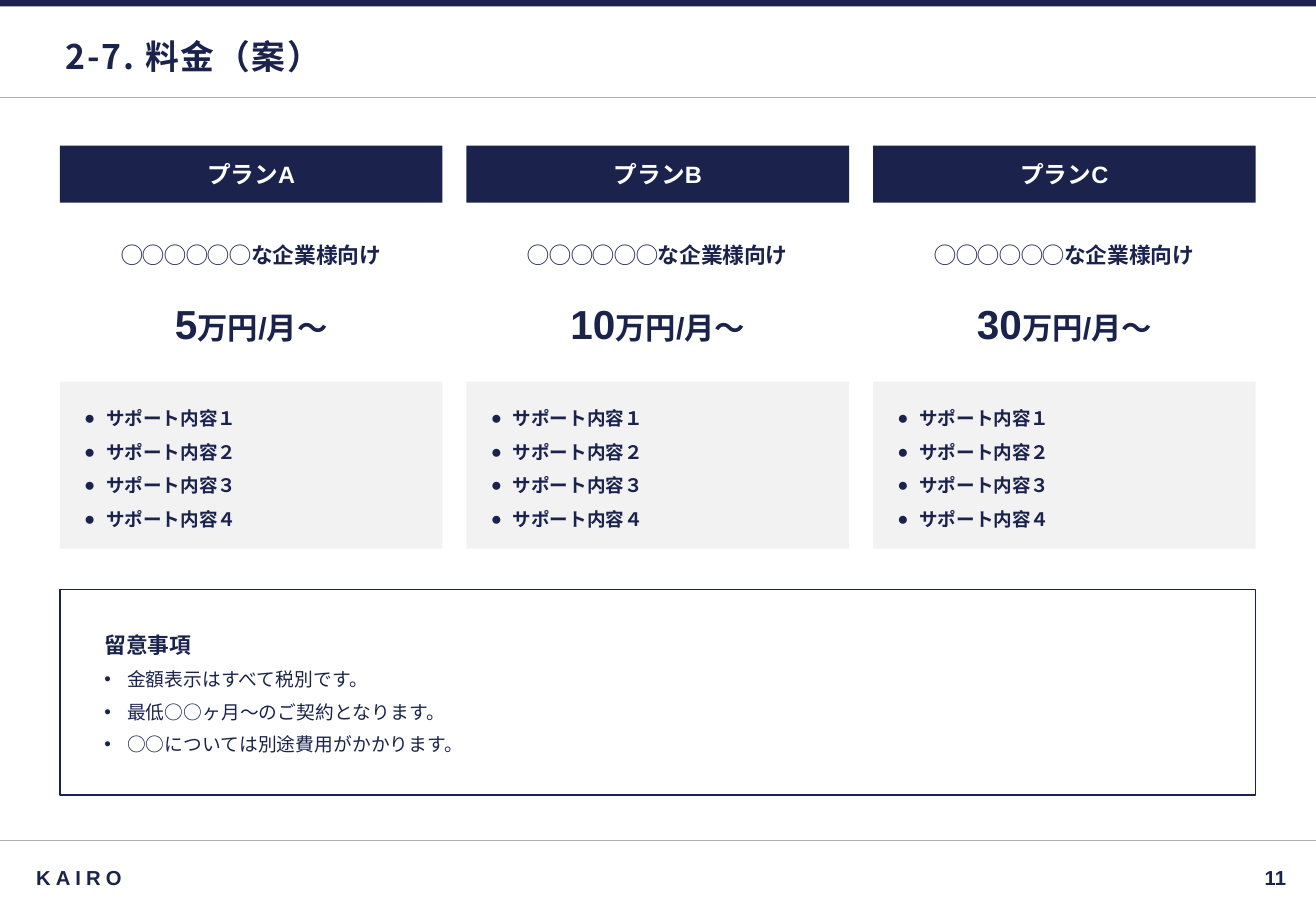
from lxml import etree
from pptx import Presentation
from pptx import util as u
from pptx.dml.color import RGBColor
from pptx.enum import shapes, text
from pptx.oxml import ns

NAVY = RGBColor(0x1B, 0x22, 0x4C)
GREY = RGBColor(0xAF, 0xAF, 0xAF)
PALE = RGBColor(0xF2, 0xF2, 0xF2)
WHITE = RGBColor(0xFF, 0xFF, 0xFF)

WIDTH, HEIGHT = 780, 540
LEFT, COL_WIDTH, COL_STEP = 35.5, 226.8, 241
MIDDLE = text.MSO_ANCHOR.MIDDLE
CENTER, RIGHT = text.PP_ALIGN.CENTER, text.PP_ALIGN.RIGHT

PLANS = [("プランA", "5"), ("プランB", "10"), ("プランC", "30")]
AUDIENCE = "◯◯◯◯◯◯な企業様向け"
PRICE_UNIT = "万円/月〜"
SUPPORTS = [f"サポート内容{n}" for n in "１２３４"]
NOTES = ["金額表示はすべて税別です。",
         "最低○○ヶ月～のご契約となります。",
         "○○については別途費用がかかります。"]


class Deck:
    """Draws in points on the current slide, in one house style."""
    latin, asian = "Arial", "Noto Sans CJK JP"

    def __init__(self, prs):
        self.slide = prs.slides.add_slide(prs.slide_layouts[6])

    def rule(self, y):
        """Full-width grey line."""
        line = self.slide.shapes.add_connector(
            shapes.MSO_CONNECTOR.STRAIGHT, 0, u.Pt(y), u.Pt(WIDTH), u.Pt(y))
        line.line.color.rgb = GREY
        line.line.width = u.Pt(0.75)
        etree.SubElement(line._element.spPr, ns.qn("a:effectLst"))

    def rect(self, x, y, w, h, fill=None, line=None):
        sp = self.slide.shapes.add_shape(
            shapes.MSO_SHAPE.RECTANGLE, *map(u.Pt, (x, y, w, h)))
        sp.shadow.inherit = False
        if fill is None:
            sp.fill.background()
        else:
            sp.fill.solid()
            sp.fill.fore_color.rgb = fill
        if line is None:
            sp.line.fill.background()
        else:
            sp.line.color.rgb = line
            sp.line.width = u.Pt(1)
        return sp

    def textbox(self, x, y, w, h):
        return self.slide.shapes.add_textbox(*map(u.Pt, (x, y, w, h)))

    def put_text(self, sp, lines, size, insets=(3, 3, 3, 3),
                 align=text.PP_ALIGN.LEFT, anchor=MIDDLE, **style):
        """Fill a shape with one paragraph per line; return the paragraphs."""
        tf = sp.text_frame
        tf.word_wrap = True
        tf.vertical_anchor = anchor
        (tf.margin_left, tf.margin_top,
         tf.margin_right, tf.margin_bottom) = map(u.Pt, insets)
        tf.text = "\n".join(lines)
        for p in tf.paragraphs:
            p.alignment = align
            for r in p.runs:
                self.style(r, size, **style)
        return tf.paragraphs

    def style(self, r, size, color=NAVY, bold=True, latin=latin, spacing=0):
        r.font.size = u.Pt(size)
        r.font.bold = bold
        r.font.color.rgb = color
        r.font.name = latin
        rPr = r._r.get_or_add_rPr()
        etree.SubElement(rPr, ns.qn("a:ea"), typeface=self.asian)
        if spacing:
            rPr.set("spc", str(spacing * 100))

    def bullet(self, p, char, indent):
        pPr = p._p.get_or_add_pPr()
        pPr.set("marL", str(u.Pt(indent)))
        pPr.set("indent", str(u.Pt(-indent)))
        color = etree.SubElement(pPr, ns.qn("a:buClr"))
        etree.SubElement(color, ns.qn("a:srgbClr"), val=str(NAVY))
        etree.SubElement(pPr, ns.qn("a:buFont"), typeface=self.latin)
        etree.SubElement(pPr, ns.qn("a:buChar"), char=char)

    def frame(self):
        """Title, rules and footer."""
        self.rule(498.2)
        self.rule(57.6)
        self.rect(0, 0, WIDTH, 3.8, NAVY)
        self.put_text(self.textbox(36, 15.1, 708.5, 36.7), ["2-7. 料金（案）"], 20,
                      latin=self.asian, spacing=1)
        self.put_text(self.textbox(14.4, 509, 623.5, 22.3), ["KAIRO"], 12,
                      insets=(7.2, 3.6, 7.2, 3.6), spacing=3)
        self.put_text(self.textbox(652.3, 509, 113, 22.3), ["11"], 12, align=RIGHT)

    def plan(self, x, name, price):
        self.put_text(self.rect(x, 86.4, COL_WIDTH, 33.8, NAVY), [name], 14,
                      insets=(7.2, 3.6, 7.2, 3.6), align=CENTER, color=WHITE)
        self.put_text(self.textbox(x, 136.8, COL_WIDTH, 28.8), [AUDIENCE], 12.9,
                      align=CENTER)

        [p] = self.put_text(self.textbox(x, 172.1, COL_WIDTH, 39.6), [price], 24,
                            align=CENTER)
        r = p.add_run()
        r.text = PRICE_UNIT
        self.style(r, 18)

        sp = self.rect(x, 226.2, COL_WIDTH, 99, PALE)
        for p in self.put_text(sp, SUPPORTS, 11, insets=(14.4, 8.6, 8.6, 11.5),
                               anchor=text.MSO_ANCHOR.TOP):
            p.line_spacing = 1.5
            self.bullet(p, "●", 13)
        sp.text_frame.auto_size = text.MSO_AUTO_SIZE.SHAPE_TO_FIT_TEXT

    def notes(self):
        self.rect(35.7, 349.4, 708.6, 121.7, line=NAVY)
        heading, *items = self.put_text(
            self.textbox(50.4, 362.9, 686.2, 96.5), ["留意事項"] + NOTES, 11.1,
            insets=(11.5, 8.6, 3, 8.6), bold=False)
        heading.runs[0].font.size = u.Pt(12.9)
        heading.runs[0].font.bold = True
        heading.space_after = u.Pt(6)
        for p in items:
            p.space_after = u.Pt(6)
            self.bullet(p, "•", 13.5)


def main():
    prs = Presentation()
    prs.slide_width, prs.slide_height = u.Pt(WIDTH), u.Pt(HEIGHT)
    deck = Deck(prs)
    deck.frame()
    for i, (name, price) in enumerate(PLANS):
        deck.plan(LEFT + i * COL_STEP, name, price)
    deck.notes()
    prs.save("out.pptx")


if __name__ == "__main__":
    main()
